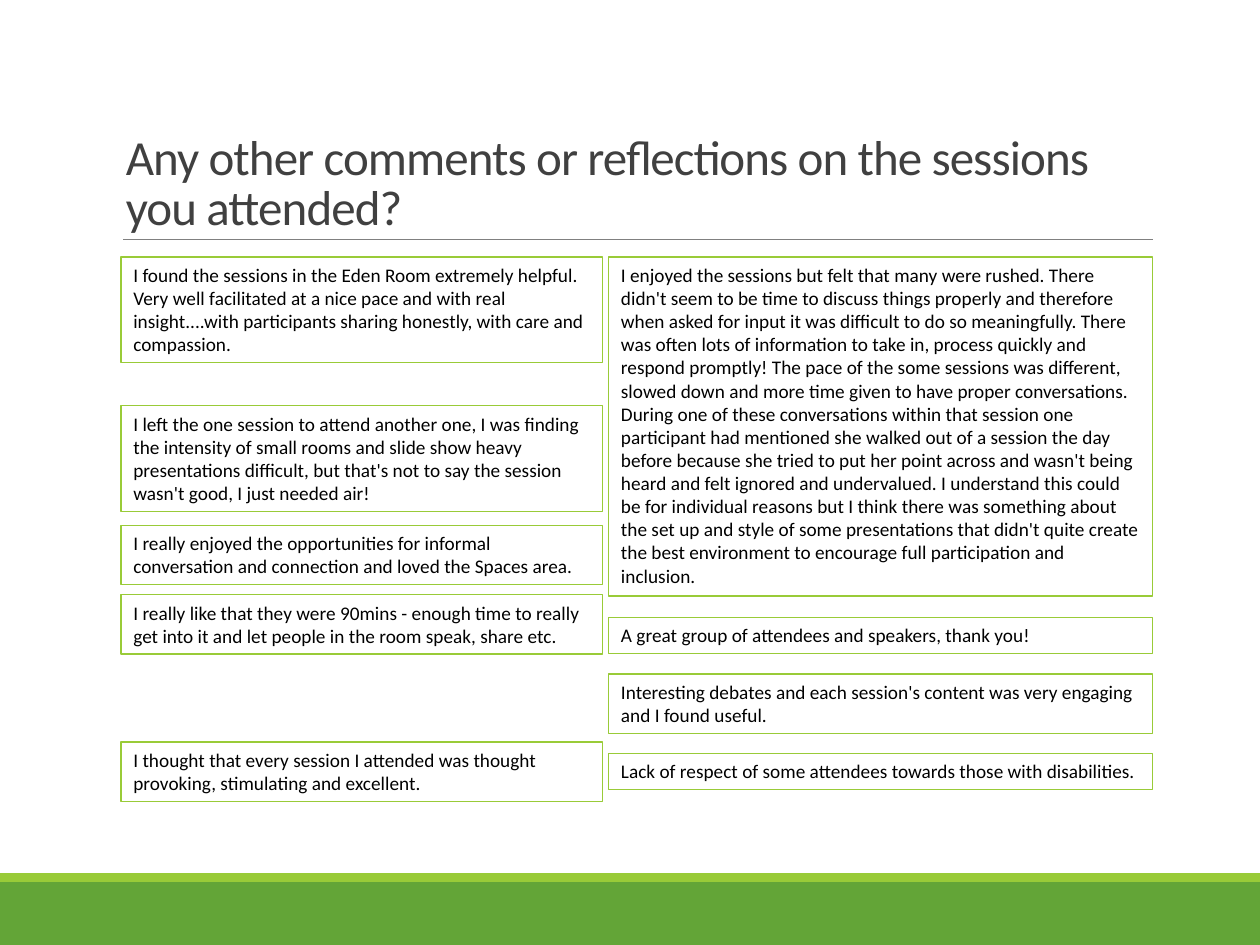
from dataclasses import dataclass

from pptx import Presentation
from pptx.dml.color import RGBColor
from pptx.enum.shapes import MSO_CONNECTOR, MSO_SHAPE
from pptx.enum.text import MSO_ANCHOR, MSO_AUTO_SIZE, PP_ALIGN
from pptx.oxml.ns import qn
from pptx.slide import Slide
from pptx.util import Inches, Pt

WIDTH, HEIGHT = 10, 7.5
FONT = "Calibri"
COLORS = {
    "band": "63A537",
    "accent": "99CB38",
    "rule": "808080",
    "title": "404040",
    "text": "000000",
}
LINE_HEIGHT = 0.185  # one line of 11 pt text
BOX_PADDING = 0.1  # top and bottom insets together
RIGHT_EDGE = 9.15


@dataclass(frozen=True)
class Column:
    left: float
    width: float


@dataclass(frozen=True)
class Comment:
    column: Column
    top: float
    lines: int
    text: str

    @property
    def height(self) -> float:
        return self.lines * LINE_HEIGHT + BOX_PADDING


LEFT = Column(0.96, 3.82)
RIGHT = Column(4.83, RIGHT_EDGE - 4.83)

# Sentences of the longest comment
RUSHED_SESSIONS = [
    "I enjoyed the sessions but felt that many were rushed.",
    "There didn't seem to be time to discuss things properly and therefore "
    "when asked for input it was difficult to do so meaningfully.",
    "There was often lots of information to take in, process quickly and "
    "respond promptly!",
    "The pace of the some sessions was different, slowed down and more time "
    "given to have proper conversations.",
    "During one of these conversations within that session one participant had "
    "mentioned she walked out of a session the day before because she tried to "
    "put her point across and wasn't being heard and felt ignored and "
    "undervalued.",
    "I understand this could be for individual reasons but I think there was "
    "something about the set up and style of some presentations that didn't "
    "quite create the best environment to encourage full participation and "
    "inclusion.",
]

COMMENTS = [
    Comment(LEFT, 2.04, 4,
            "I found the sessions in the Eden Room extremely helpful. Very well "
            "facilitated at a nice pace and with real insight....with participants "
            "sharing honestly, with care and compassion."),
    Comment(LEFT, 3.22, 4,
            "I left the one session to attend another one, I was finding the "
            "intensity of small rooms and slide show heavy presentations difficult, "
            "but that's not to say the session wasn't good, I just needed air!"),
    Comment(LEFT, 4.17, 2,
            "I really enjoyed the opportunities for informal conversation and "
            "connection and loved the Spaces area."),
    Comment(LEFT, 4.72, 2,
            "I really like that they were 90mins - enough time to really get into "
            "it and let people in the room speak, share etc."),
    Comment(LEFT, 5.89, 2,
            "I thought that every session I attended was thought provoking, "
            "stimulating and excellent."),
    Comment(RIGHT, 2.04, 14, " ".join(RUSHED_SESSIONS)),
    Comment(RIGHT, 4.9, 1, "A great group of attendees and speakers, thank you!"),
    Comment(RIGHT, 5.35, 2,
            "Interesting debates and each session's content was very engaging and "
            "I found useful."),
    Comment(RIGHT, 5.98, 1,
            "Lack of respect of some attendees towards those with disabilities."),
]


def color(name: str) -> RGBColor:
    return RGBColor.from_string(COLORS[name])


def add_band(slide: Slide, top: float, height: float, fill: str) -> None:
    band = slide.shapes.add_shape(
        MSO_SHAPE.RECTANGLE, 0, Inches(top), Inches(WIDTH), Inches(height))
    band.shadow.inherit = False
    band.fill.solid()
    band.fill.fore_color.rgb = color(fill)
    band.line.fill.background()


def add_title(slide: Slide, text: str) -> None:
    title = slide.shapes.add_textbox(
        Inches(0.9), Inches(0.33), Inches(RIGHT_EDGE - 0.9), Inches(1.59))
    frame = title.text_frame
    frame.word_wrap = True
    frame.vertical_anchor = MSO_ANCHOR.BOTTOM
    paragraph = frame.paragraphs[0]
    paragraph.line_spacing = 0.85
    run = paragraph.add_run()
    run.text = text
    run.font._element.set("spc", "-50")
    paragraph.font.name = FONT
    paragraph.font.size = Pt(28)
    paragraph.font.color.rgb = color("title")


def add_rule(slide: Slide, left: float, top: float) -> None:
    rule = slide.shapes.add_connector(
        MSO_CONNECTOR.STRAIGHT,
        Inches(left), Inches(top), Inches(RIGHT_EDGE), Inches(top))
    rule.line.color.rgb = color("rule")
    rule.line.width = Pt(0.5)
    properties = rule._element.spPr
    properties.append(properties.makeelement(qn("a:effectLst"), {}))


def add_comment(slide: Slide, comment: Comment) -> None:
    box = slide.shapes.add_shape(
        MSO_SHAPE.RECTANGLE,
        Inches(comment.column.left), Inches(comment.top),
        Inches(comment.column.width), Inches(comment.height))
    box.shadow.inherit = False
    box.fill.background()
    box.line.color.rgb = color("accent")
    box.line.width = Pt(0.75)
    frame = box.text_frame
    frame.word_wrap = True
    frame.auto_size = MSO_AUTO_SIZE.SHAPE_TO_FIT_TEXT
    frame.vertical_anchor = MSO_ANCHOR.TOP
    paragraph = frame.paragraphs[0]
    paragraph.text = comment.text
    paragraph.alignment = PP_ALIGN.LEFT
    paragraph.font.name = FONT
    paragraph.font.size = Pt(11)
    paragraph.font.color.rgb = color("text")


def main() -> None:
    deck = Presentation()
    deck.slide_width, deck.slide_height = Inches(WIDTH), Inches(HEIGHT)
    slide = deck.slides.add_slide(deck.slide_layouts[6])

    # Footer bands
    add_band(slide, 7, 0.5, "band")
    add_band(slide, 6.93, 0.07, "accent")

    # Heading
    add_rule(slide, 0.98, 1.9)
    add_title(slide, "Any other comments or reflections on the sessions you attended?")

    # Attendee comments
    for comment in COMMENTS:
        add_comment(slide, comment)

    deck.save("out.pptx")


if __name__ == "__main__":
    main()
